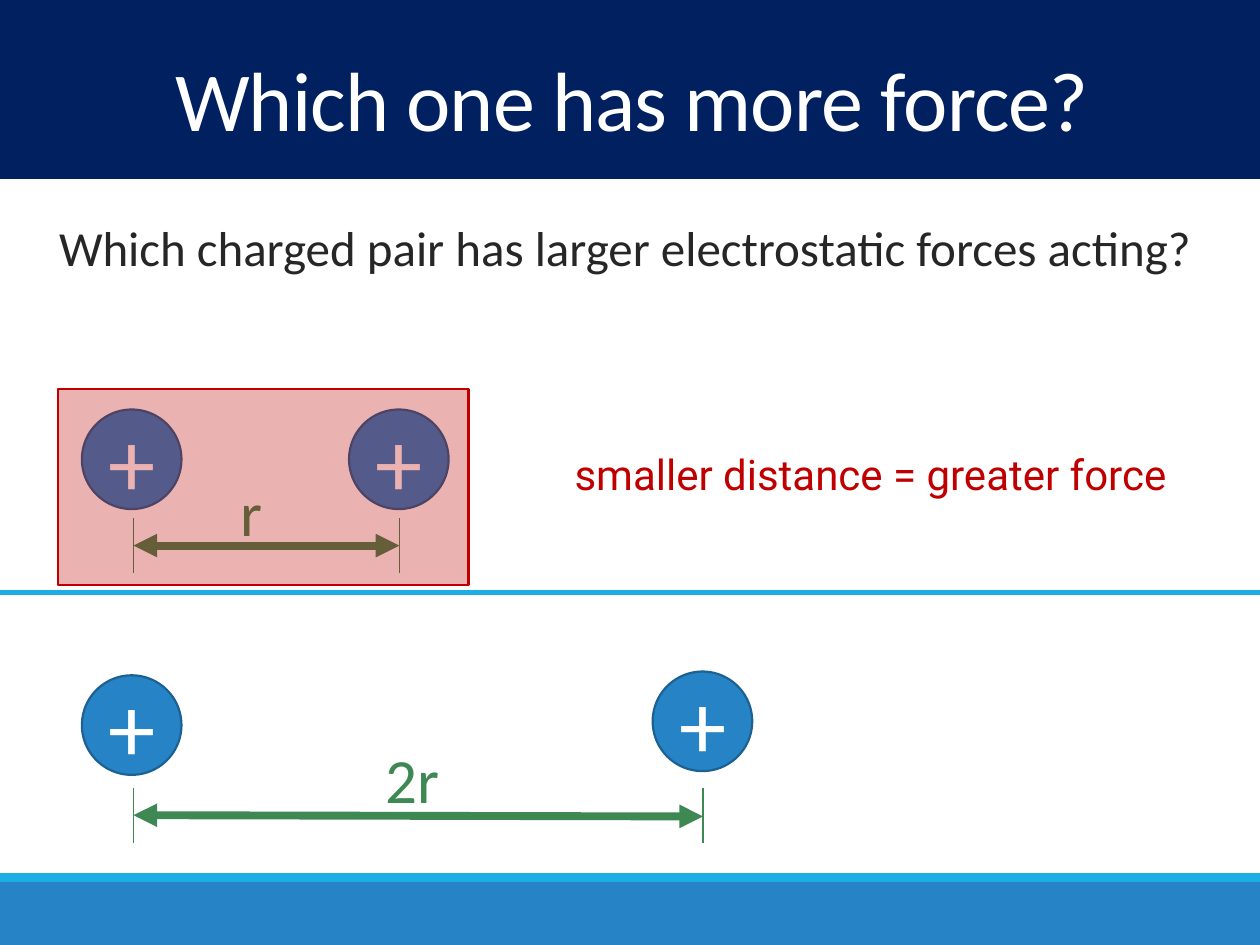
from lxml.etree import SubElement
from pptx import Presentation
from pptx.dml.color import RGBColor
from pptx.enum.shapes import MSO_CONNECTOR, MSO_SHAPE
from pptx.enum.text import MSO_ANCHOR, PP_ALIGN
from pptx.oxml.ns import qn
from pptx.util import Inches, Pt

NAVY, BLUE, SKY, EDGE = "002060", "2683C6", "1CADE4", "1C6192"
GREEN, RED, WHITE, INK = "3E8853", "C00000", "FFFFFF", "262626"
W, H = 10, 7.5
BALL = 0.79
LEFT_X = 1.06  # left end of both distance markers

BANDS = [((0, 7, W, 0.5), BLUE), ((0, 6.93, W, 0.07), SKY), ((0, 0, W, 1.42), NAVY)]
# ball corners, right end of marker, y of the arrow's two ends, label and its place
PAIRS = [
    dict(balls=[(0.65, 3.25), (2.77, 3.25)], right=3.17, arrow=(4.33, 4.33),
         label="r", at=(1.81, 3.71, 0.38, 0.71)),
    dict(balls=[(0.65, 5.36), (5.18, 5.33)], right=5.58, arrow=(6.47, 6.48),
         label="2r", at=(2.96, 5.83, 0.63, 0.71)),
]


def rgb(hex_color):
    return RGBColor.from_string(hex_color)


def write(shape, text, size, color, font="Calibri", align=PP_ALIGN.LEFT,
          anchor=MSO_ANCHOR.TOP, wrap=True):
    tf = shape.text_frame
    tf.word_wrap, tf.vertical_anchor = wrap, anchor
    p = tf.paragraphs[0]
    p.text, p.alignment = text, align
    p.font.size, p.font.name, p.font.color.rgb = Pt(size), font, rgb(color)
    return p


def add_text(s, at, *args, **kwargs):
    return write(s.shapes.add_textbox(*map(Inches, at)), *args, **kwargs)


def add_filled(s, kind, at, fill, line=None):
    sp = s.shapes.add_shape(kind, *map(Inches, at))
    sp.shadow.inherit = False
    sp.fill.solid()
    sp.fill.fore_color.rgb = rgb(fill)
    if line:
        sp.line.color.rgb, sp.line.width = rgb(line), Pt(1.25)
    else:
        sp.line.fill.background()
    return sp


def add_line(s, x1, y1, x2, y2, color, width, arrows=False):
    c = s.shapes.add_connector(MSO_CONNECTOR.STRAIGHT, *map(Inches, (x1, y1, x2, y2)))
    c.line.color.rgb, c.line.width = rgb(color), Pt(width)
    if arrows:
        for end in ("a:headEnd", "a:tailEnd"):
            SubElement(c.line._get_or_add_ln(), qn(end), type="triangle")
    SubElement(c._element.spPr, qn("a:effectLst"))


def add_pair(s, balls, right, arrow, label, at):
    """Two charges above a distance marker with its label."""
    for x, y in balls:
        ball = add_filled(s, MSO_SHAPE.OVAL, (x, y, BALL, BALL), BLUE, EDGE)
        write(ball, "+", 54, WHITE, align=PP_ALIGN.CENTER, anchor=MSO_ANCHOR.MIDDLE)
    add_line(s, LEFT_X, arrow[0], right, arrow[1], GREEN, 4.5, arrows=True)
    for x in (LEFT_X, right):
        add_line(s, x, arrow[0] - 0.22, x, arrow[0] + 0.22, GREEN, 1)
    add_text(s, at, label, 36, GREEN, wrap=False)


def main():
    prs = Presentation()
    prs.slide_width, prs.slide_height = Inches(W), Inches(H)
    s = prs.slides.add_slide(prs.slide_layouts[6])

    for at, color in BANDS:
        add_filled(s, MSO_SHAPE.RECTANGLE, at, color)
    title = add_text(s, (0.03, 0.42, 9.97, 0.84), "Which one has more force?", 48, WHITE,
                     align=PP_ALIGN.CENTER, anchor=MSO_ANCHOR.MIDDLE)
    title.line_spacing = 0.85
    title.runs[0].font._element.set("spc", "-50")
    add_text(s, (0.37, 1.68, 9.28, 0.57),
             "Which charged pair has larger electrostatic forces acting?", 28, INK)

    add_line(s, 0, 4.7, W, 4.7, SKY, 3)
    for pair in PAIRS:
        add_pair(s, **pair)

    answer = add_filled(s, MSO_SHAPE.RECTANGLE, (0.46, 3.09, 3.26, 1.55), RED, RED)
    fill_color = answer._element.spPr.find(qn("a:solidFill"))[0]
    SubElement(fill_color, qn("a:alpha"), val="30000")
    add_text(s, (4.31, 3.51, 5.2, 0.5), "smaller distance = greater force", 24, RED,
             font="Roboto", align=PP_ALIGN.CENTER)

    prs.save("out.pptx")


if __name__ == "__main__":
    main()
